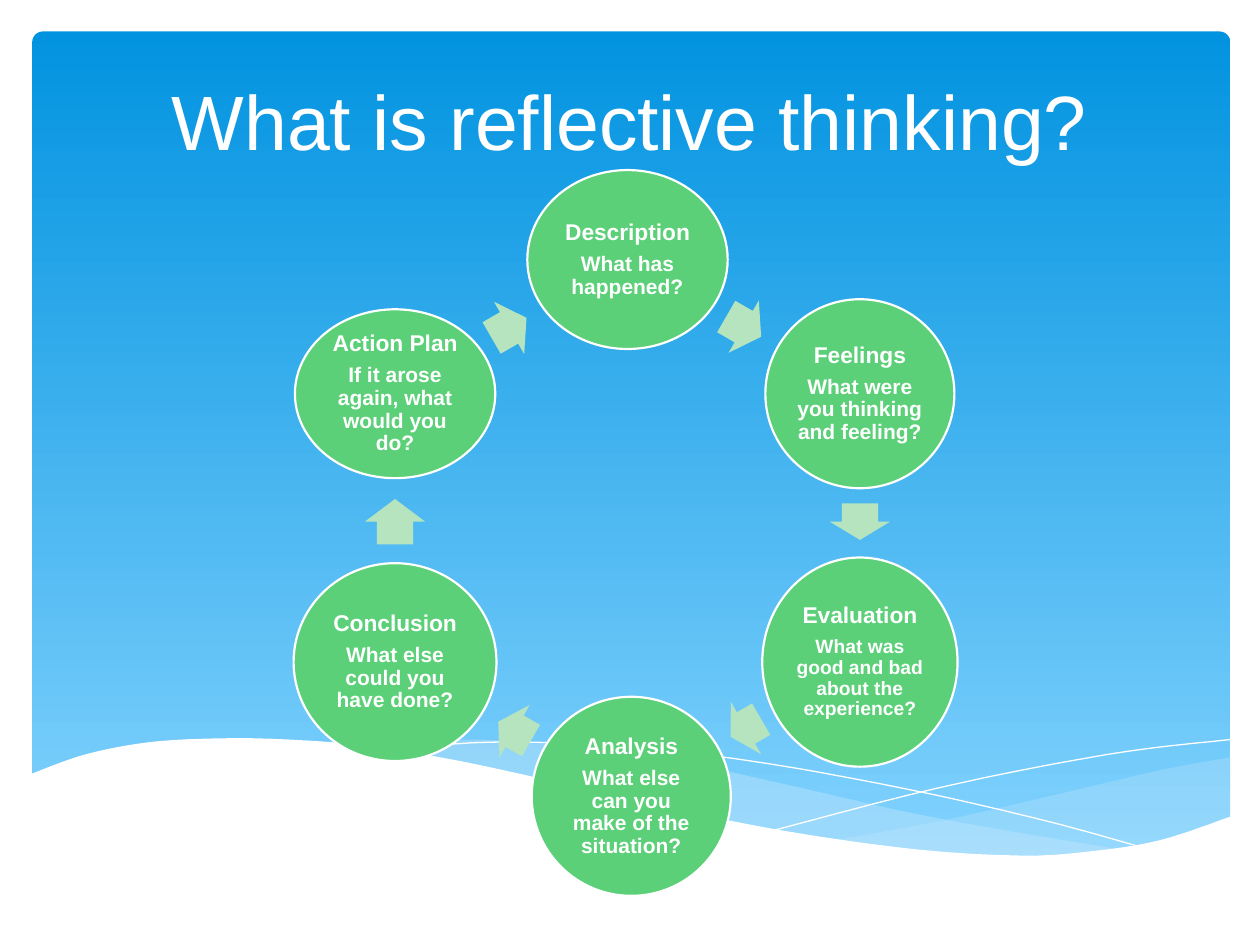
"""Build the reflective thinking cycle: six stages on a ring above a wave."""
from collections import namedtuple
import math
from lxml import etree
from pptx import Presentation, util as u
from pptx.dml.color import RGBColor
from pptx.enum import shapes, text
from pptx.oxml.ns import qn

COLORS = {"sky_top": "0293E0", "sky_low": "83D3FE", "haze": "C6E7FC",
          "white": "FFFFFF", "stage": "5BD078", "arrow": "B5E4BE"}
RGB = {name: RGBColor.from_string(value) for name, value in COLORS.items()}
COLUMNS, ROWS = 10, 7.5
CELL = u.Inches(1)
FINE = 1000
CURVE_STEPS = 8

Stage = namedtuple("Stage", "name question size width height nudge")
Arrow = namedtuple("Arrow", "length shift")
CYCLE = [
    (Stage("Description", "What has happened?", 12, 1.59, 1.42, 0),
     Arrow(0.32, 0)),
    (Stage("Feelings", "What were you thinking and feeling?", 12, 1.5, 1.5, 0),
     Arrow(0.29, -0.05)),
    (Stage("Evaluation", "What was good and bad about the experience?", 11, 1.55, 1.66, 0),
     Arrow(0.28, -0.02)),
    (Stage("Analysis", "What else can you make of the situation?", 12, 1.58, 1.58, 0.03),
     Arrow(0.3, -0.03)),
    (Stage("Conclusion", "What else could you have done?", 12, 1.61, 1.57, 0),
     Arrow(0.36, 0.05)),
    (Stage("Action Plan", "If it arose again, what would you do?", 12, 1.59, 1.34, 0),
     Arrow(0.32, -0.02)),
]
RING_X, RING_Y, RADIUS = 4.98, 4.19, 2.13
STEP = 360 / len(CYCLE)
ARROW_RADIUS = RADIUS * math.cos(math.radians(STEP / 2))

HAZES = [
    (29, [[(9.77, 6.01), (9.22, 6.11), (8.62, 6.25), (7.54, 6.5), (6.62, 6.67)],
          [(6.62, 6.67), (7.33, 6.76), (8.04, 6.8), (8.73, 6.76), (9.29, 6.65),
           (9.77, 6.49)]]),
    (40, [[(2.87, 5.93), (3.62, 5.87), (4.42, 5.91), (5.28, 6.02), (6.3, 6.24),
           (7.42, 6.49), (8.94, 6.75)],
          [(8.94, 6.75), (8.19, 6.8), (7.37, 6.77), (6.35, 6.63), (5.3, 6.42),
           (4.5, 6.24), (3.63, 6.04), (2.87, 5.93)]]),
]
FALLING_THREAD = [(3.1, 5.97), (3.53, 5.91), (4.17, 5.89), (5.11, 5.94), (6.09, 6.06),
                  (7.28, 6.28), (8.32, 6.52), (9.08, 6.73)]
RISING_THREAD = [(6.14, 6.59), (7.21, 6.31), (8.07, 6.12), (8.97, 5.96), (9.76, 5.87)]
WAVE_CREST = [(9.77, 6.48), (9.2, 6.67), (8.63, 6.76), (8.09, 6.79), (7.26, 6.74),
              (6.26, 6.6), (5.29, 6.41), (4.47, 6.22), (3.65, 6.04), (2.92, 5.92),
              (2.3, 5.87), (1.77, 5.86), (1.19, 5.89), (0.67, 5.99), (0.23, 6.15)]
WAVE_FLOOR = [(0.23, 7.31), (9.77, 7.31)]

deck = Presentation()
deck.slide_width, deck.slide_height = round(COLUMNS * CELL), round(ROWS * CELL)
slide = deck.slides.add_slide(deck.slide_layouts[5])


def place(kind, center_x, center_y, width, height, color):
    """Add a flat preset shape centred on a grid point."""
    shape = slide.shapes.add_shape(
        kind, *(round(n * CELL) for n in
                (center_x - width / 2, center_y - height / 2, width, height)))
    shape.shadow.inherit = False
    shape.fill.solid()
    shape.fill.fore_color.rgb = RGB[color]
    shape.line.fill.background()
    return shape


def trace(edges, color=None):
    """Join smooth (Catmull-Rom) edges into a filled outline, or an open line without color."""
    points = []
    for edge in edges:
        padded = [edge[0], *edge, edge[-1]]
        points.append(edge[0])
        for knots in zip(padded, padded[1:], padded[2:], padded[3:]):
            for step in range(1, CURVE_STEPS + 1):
                t = step / CURVE_STEPS
                points.append(tuple(
                    b + (c - a) * t / 2 + (2 * a - 5 * b + 4 * c - d) * t ** 2 / 2
                    + (3 * b - a - 3 * c + d) * t ** 3 / 2
                    for a, b, c, d in zip(*knots)))
    start, *rest = [(x * FINE, y * FINE) for x, y in points]
    builder = slide.shapes.build_freeform(*start, scale=CELL / FINE)
    builder.add_line_segments(rest, close=color is not None)
    shape = builder.convert_to_shape()
    shape.shadow.inherit = False
    if color:
        shape.fill.solid()
        shape.fill.fore_color.rgb = RGB[color]
        shape.line.fill.background()
    else:
        shape.fill.background()
        shape.line.color.rgb = RGB["white"]
        shape.line.width = u.Pt(0)
    return shape


sky = place(shapes.MSO_SHAPE.ROUNDED_RECTANGLE, COLUMNS / 2 + 0.01, 3.55, 9.51, 6.6, "sky_top")
sky.adjustments[0] = 0.013
sky.fill.gradient()
sky.fill.gradient_angle = 270
for stop, shade in zip(sky.fill.gradient_stops, ("sky_top", "sky_low")):
    stop.color.rgb = RGB[shade]

for opacity, edges in HAZES:
    haze = trace(edges, "haze")
    tint = haze.fill._xPr.find(qn("a:solidFill"))[0]
    etree.SubElement(tint, qn("a:alpha")).set("val", str(opacity * 1000))
for thread in (FALLING_THREAD, RISING_THREAD):
    trace([thread])
trace([WAVE_CREST, WAVE_FLOOR], "white")

title = slide.shapes.title
slide.shapes._spTree.append(title._element)
title.left, title.top, title.width, title.height = (
    round(n * CELL) for n in (0.75, 0.29, 8.5, 1.08))
title.text_frame.text = "What is reflective thinking?"
title.text_frame.vertical_anchor = text.MSO_ANCHOR.BOTTOM
heading = title.text_frame.paragraphs[0]
heading.alignment = text.PP_ALIGN.CENTER
heading_font = heading.runs[0].font
heading_font.name, heading_font.size = "Arial", u.Pt(44)
heading_font.color.rgb = RGB["white"]

for index, (stage, arrow) in enumerate(CYCLE):
    turn = math.radians(index * STEP)
    circle = place(shapes.MSO_SHAPE.OVAL,
                   RING_X + RADIUS * math.sin(turn) + stage.nudge,
                   RING_Y - RADIUS * math.cos(turn),
                   stage.width, stage.height, "stage")
    circle.line.color.rgb = RGB["white"]
    circle.line.width = u.Pt(1.25)
    label = circle.text_frame
    label.margin_left = label.margin_right = u.Inches(0.02)
    label.margin_top = label.margin_bottom = u.Inches(0.02)
    label.word_wrap = True
    label.vertical_anchor = text.MSO_ANCHOR.MIDDLE
    label.text = f"{stage.name}\n{stage.question}"
    for paragraph, size in zip(label.paragraphs, (13, stage.size)):
        paragraph.alignment = text.PP_ALIGN.CENTER
        paragraph.line_spacing = 0.9
        paragraph.space_after = u.Pt(size * 0.35)
        font = paragraph.runs[0].font
        font.name, font.size, font.bold = "Arial", u.Pt(size), True
        font.color.rgb = RGB["white"]

    direction = (index + 0.5) * STEP
    turn = math.radians(direction)
    pointer = place(shapes.MSO_SHAPE.RIGHT_ARROW,
                    RING_X + ARROW_RADIUS * math.sin(turn) + arrow.shift * math.cos(turn),
                    RING_Y - ARROW_RADIUS * math.cos(turn) + arrow.shift * math.sin(turn),
                    arrow.length, 0.48, "arrow")
    pointer.rotation = direction
    pointer.adjustments[0], pointer.adjustments[1] = 0.6, 0.5

deck.save("out.pptx")
